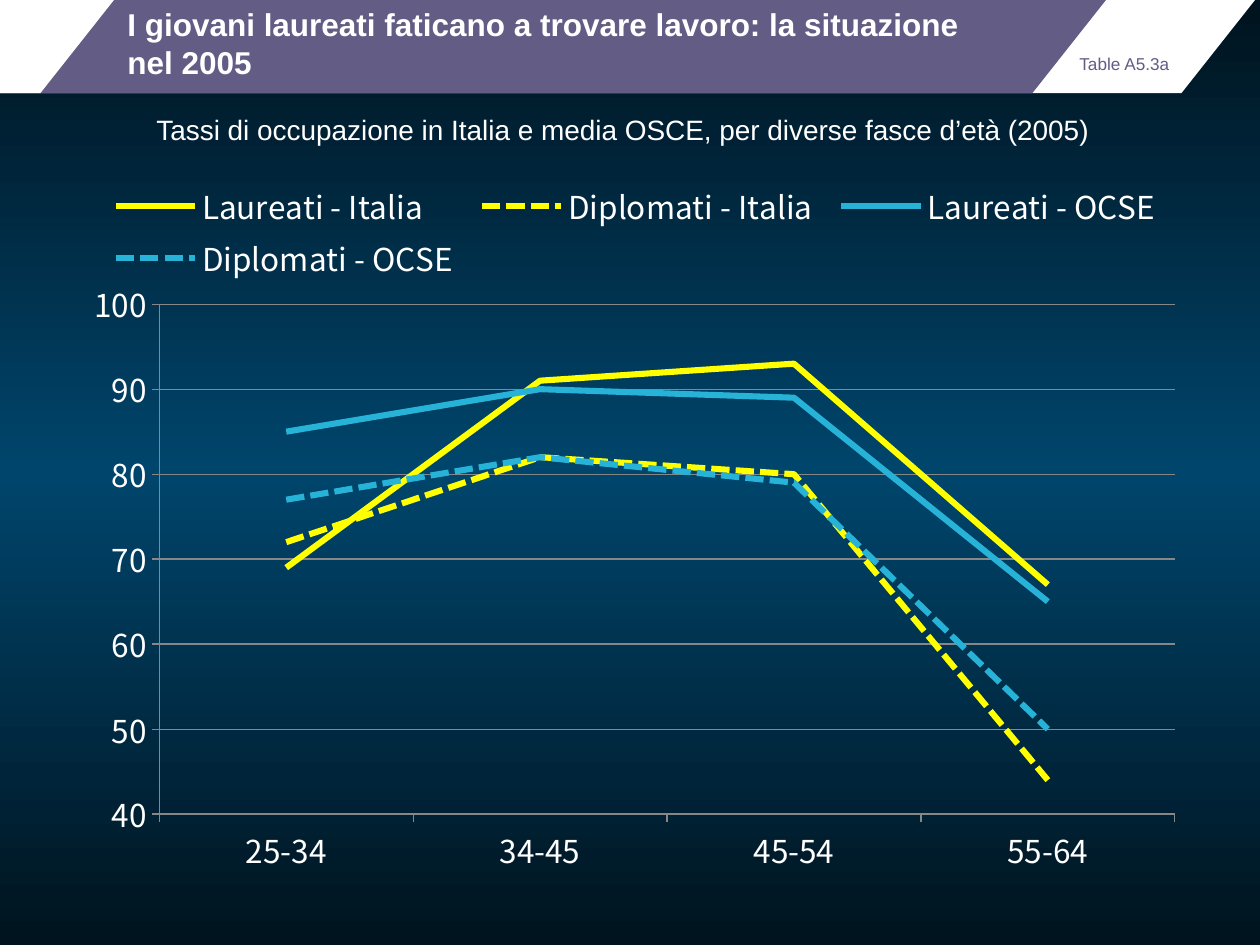
"""Builds a slide with a banner and a line chart of employment rates by age group."""
from copy import deepcopy

from pptx import Presentation
from pptx.chart.data import CategoryChartData
from pptx.dml.color import RGBColor
from pptx.enum.chart import XL_CHART_TYPE, XL_LEGEND_POSITION, XL_MARKER_STYLE, XL_TICK_MARK
from pptx.enum.dml import MSO_LINE
from pptx.enum.shapes import MSO_SHAPE
from pptx.enum.text import MSO_ANCHOR
from pptx.oxml import parse_xml
from pptx.oxml.ns import nsdecls
from pptx.util import Pt

SCALE = 914400 / 126
WHITE, PURPLE, YELLOW, BLUE, GREY = "FFFFFF", "635C85", "FFFF00", "27B3D7", "878787"


def px(*lengths):
    return [round(length * SCALE) for length in lengths]


def color(value):
    return RGBColor.from_string(value)


presentation = Presentation()
presentation.slide_width, presentation.slide_height = px(1260, 945)
slide = presentation.slides.add_slide(presentation.slide_layouts[6])

slide.background.fill.gradient()
slide.background.fill.gradient_angle = 90
stop_list = slide.element.xpath(".//a:gsLst")[0]
stop_list.append(deepcopy(stop_list[0]))
stops = [(0, "00131E"), (0.5, "00456C"), (1, "00131E")]
for stop, (position, value) in zip(slide.background.fill.gradient_stops, stops):
    stop.position = position
    stop.color.rgb = color(value)

for left, width, value in [(-25, 1280, WHITE), (-74, 1180, PURPLE), (-73, 187, WHITE)]:
    shape = slide.shapes.add_shape(MSO_SHAPE.PARALLELOGRAM, *px(left, 0, width, 93))
    shape.adjustments[0] = 0.79
    shape.shadow.inherit = False
    shape.fill.solid()
    shape.fill.fore_color.rgb = color(value)
    shape.line.fill.background()

texts = [
    ("I giovani laureati faticano a trovare lavoro: la situazione nel 2005",
     (115, 0, 903, 86), 18, WHITE, True, MSO_ANCHOR.MIDDLE),
    ("Table A5.3a", (1067, 47, 118, 47), 9.8, PURPLE, False, MSO_ANCHOR.TOP),
    ("Tassi di occupazione in Italia e media OSCE, per diverse fasce d’età (2005)",
     (144, 106, 1042, 59), 16, WHITE, False, MSO_ANCHOR.TOP),
]
for text, box, size, value, bold, anchor in texts:
    frame = slide.shapes.add_textbox(*px(*box)).text_frame
    frame.word_wrap = True
    frame.vertical_anchor = anchor
    run = frame.paragraphs[0].add_run()
    run.text = text
    run.font.name = "Arial"
    run.font.size = Pt(size)
    run.font.bold = bold
    run.font.color.rgb = color(value)

series_rows = [
    ("Laureati - Italia", (69, 91, 93, 67), YELLOW, MSO_LINE.SOLID),
    ("Diplomati - Italia", (72, 82, 80, 44), YELLOW, MSO_LINE.SQUARE_DOT),
    ("Laureati - OCSE", (85, 90, 89, 65), BLUE, MSO_LINE.SOLID),
    ("Diplomati - OCSE", (77, 82, 79, 50), BLUE, MSO_LINE.SQUARE_DOT),
]
chart_data = CategoryChartData(number_format="0")
chart_data.categories = ["25-34", "34-45", "45-54", "55-64"]
for name, values, value, dash in series_rows:
    chart_data.add_series(name, values)
chart = slide.shapes.add_chart(XL_CHART_TYPE.LINE, *px(64, 155, 1121, 735), chart_data).chart
chart.has_title = False
chart.font.name = "Noto Sans CJK KR"
chart.font.size = Pt(18)
chart.font.color.rgb = color(WHITE)
chart.plots[0].vary_by_categories = False
for series, (name, values, value, dash) in zip(chart.plots[0].series, series_rows):
    series.smooth = False
    series.marker.style = XL_MARKER_STYLE.NONE
    series.format.line.width = Pt(3.5)
    series.format.line.color.rgb = color(value)
    series.format.line.dash_style = dash

value_axis = chart.value_axis
value_axis.minimum_scale, value_axis.maximum_scale, value_axis.major_unit = 40, 100, 10
value_axis.has_major_gridlines = True
value_axis.tick_labels.number_format = "0"
value_axis.tick_labels.number_format_is_linked = False
for axis in (chart.category_axis, value_axis):
    axis.major_tick_mark = XL_TICK_MARK.OUTSIDE
for line in (chart.category_axis.format.line, value_axis.format.line,
             value_axis.major_gridlines.format.line):
    line.width = Pt(0.75)
    line.color.rgb = color(GREY)

chart.has_legend = True
chart.legend.position = XL_LEGEND_POSITION.RIGHT
chart.legend.include_in_layout = False
chart_space = chart.element
for layout in chart_space.xpath(".//c:plotArea/c:layout | .//c:legend/c:layout"):
    layout.getparent().remove(layout)
layouts = [
    (chart_space.xpath(".//c:plotArea")[0], 0, '<c:layoutTarget val="inner"/>', (0.085, 0.203, 0.906, 0.694)),
    (chart_space.xpath(".//c:legend")[0], 1, "", (0.03, 0.03, 0.96, 0.15)),
]
for parent, index, target, (left, top, width, height) in layouts:
    parent.insert(index, parse_xml(
        f'<c:layout {nsdecls("c")}><c:manualLayout>{target}'
        '<c:xMode val="edge"/><c:yMode val="edge"/>'
        f'<c:x val="{left}"/><c:y val="{top}"/><c:w val="{width}"/><c:h val="{height}"/>'
        '</c:manualLayout></c:layout>'))

presentation.save("out.pptx")
